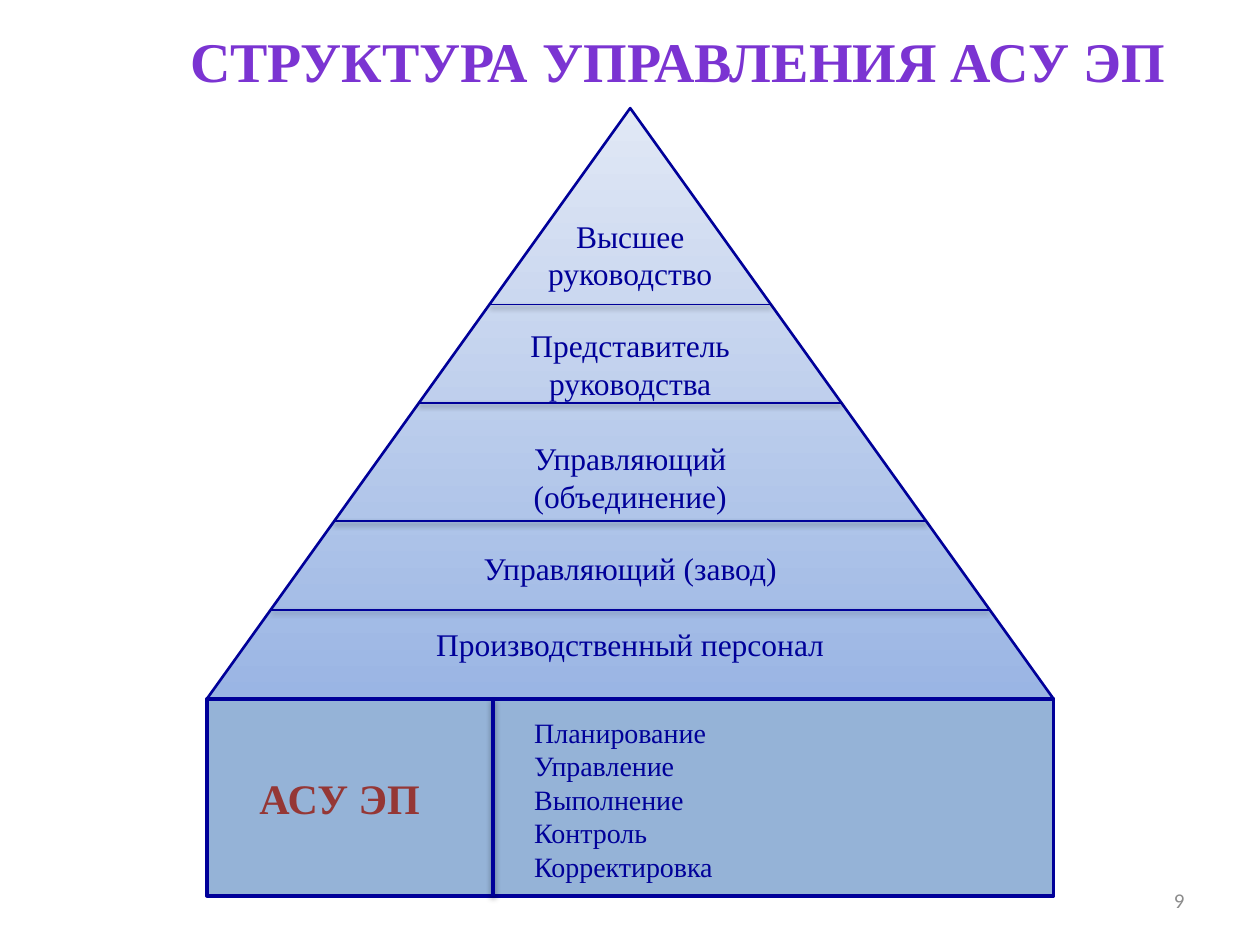
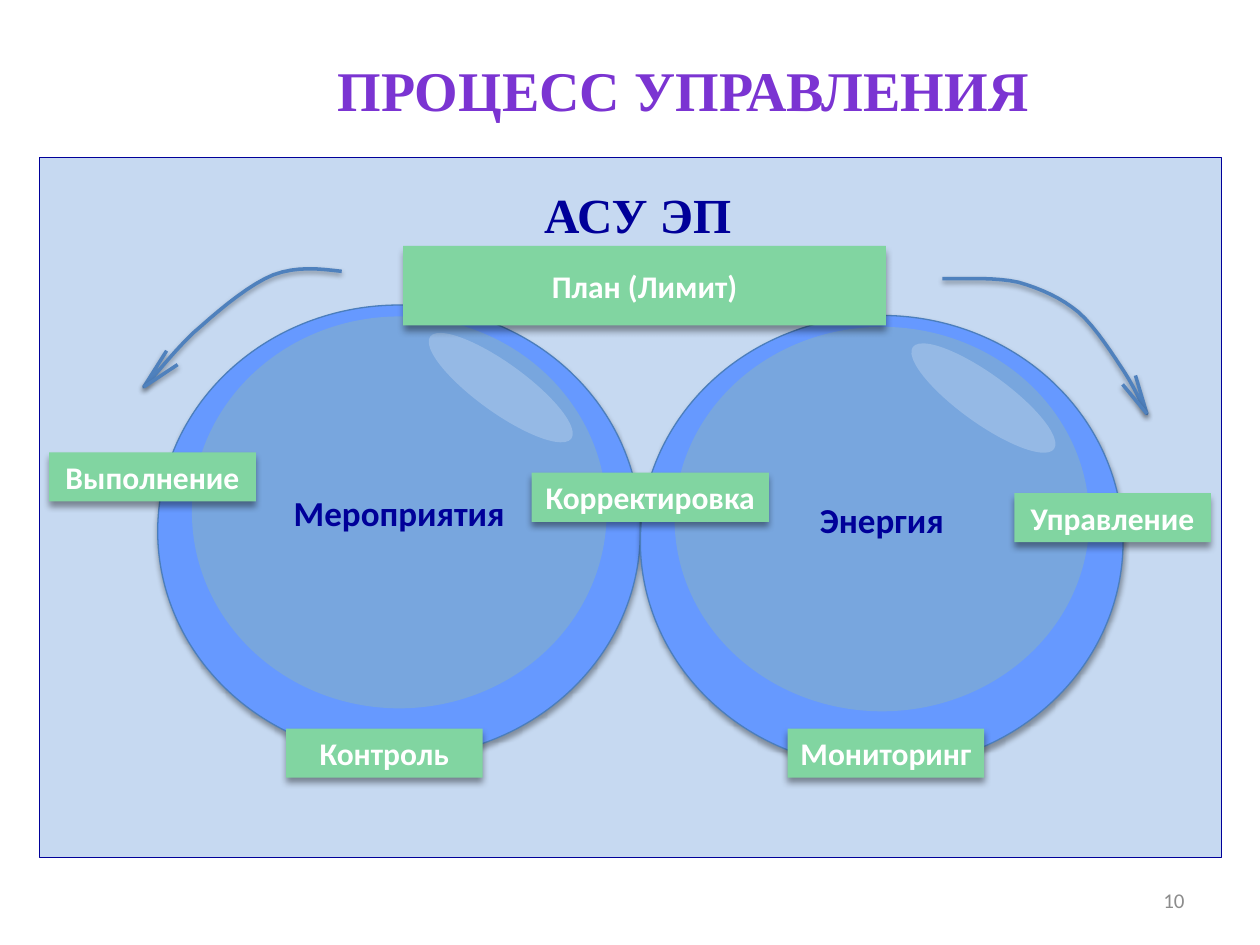
from lxml.etree import SubElement
from pptx import Presentation
from pptx.dml.color import RGBColor
from pptx.enum.shapes import MSO_CONNECTOR, MSO_SHAPE
from pptx.enum.text import MSO_ANCHOR, MSO_AUTO_SIZE, PP_ALIGN
from pptx.oxml.ns import qn
from pptx.util import Cm, Pt

NAVY = "000099"
VIOLET = "7B34D2"
WHITE = "FFFFFF"
GREY = "8C8C8C"
GREEN = "81D5A1"
ARROW_BLUE = "4F81BD"
SERIF = "Times New Roman"
SANS = "Calibri"

TITLE = {"name": SERIF, "size": Pt(32), "bold": True, "color": VIOLET}
PAGE_NUMBER = {"name": SANS, "size": Pt(12), "color": GREY}
LEVEL = {"name": SERIF, "size": Pt(18), "color": NAVY}
FUNCTION = {"name": SERIF, "size": Pt(16), "color": NAVY}
SYSTEM = {"name": SERIF, "size": Pt(24), "bold": True, "color": "953735"}
PANEL_HEADING = {"name": SERIF, "size": Pt(28), "bold": True, "color": NAVY}
BALL_LABEL = {"name": SANS, "size": Pt(20), "bold": True, "color": NAVY}
STAGE = {"name": SANS, "size": Pt(18), "bold": True, "color": WHITE}

LINE_SHADOW = (38, 3.1, 1.6)
BALL_SHADOW = (35, 3.1, 1.8)
STAGE_SHADOW = (40, 4, 3)

PYRAMID_LEVELS = [
    ("Высшее\nруководство", 2.95),
    ("Представитель\nруководства", 5.16),
    ("Управляющий\n(объединение)", 7.44),
    ("Управляющий (завод)", 9.27),
    ("Производственный персонал", 10.8),
]
LEVEL_BORDERS = [3.96, 5.94, 8.33, 10.11]
FUNCTIONS = "Планирование\nУправление\nВыполнение\nКонтроль\nКорректировка"

STAGES = [
    ("План (Лимит)", 7.34, 1.78, 9.73, 1.6),
    ("Корректировка", 9.93, 6.35, 4.78, 0.99),
    ("Выполнение", 0.2, 5.94, 4.17, 0.99),
    ("Контроль", 4.98, 11.51, 3.96, 0.99),
    ("Мониторинг", 15.09, 11.51, 3.96, 0.99),
    ("Управление", 19.66, 6.76, 3.96, 0.99),
]
RIGHT_CURVE = [
    (18.21, 2.44), (18.75, 2.44), (19.28, 2.41), (19.74, 2.51),
    (20.19, 2.64), (20.6, 2.82), (20.96, 3.12),
    (21.31, 3.43), (21.67, 4.01), (21.89, 4.34),
    (22.12, 4.7), (22.3, 5.13), (22.33, 5.16),
]
LEFT_CURVE = [
    (6.1, 2.29), (5.66, 2.24), (5.21, 2.18), (4.72, 2.36),
    (4.27, 2.54), (3.71, 3.0), (3.28, 3.38),
    (2.84, 3.73), (2.24, 4.52), (2.11, 4.62),
]


def color(hex_text):
    """Turn a hex string into a colour."""
    return RGBColor.from_string(hex_text)


def set_effects(shape, shadow=None):
    """Replace the theme shadow by none or by a soft downward one."""
    effects = SubElement(shape._element.spPr, qn("a:effectLst"))
    if shadow:
        opacity, blur, distance = shadow
        outer = SubElement(effects, qn("a:outerShdw"), blurRad=str(Pt(blur)),
                           dist=str(Pt(distance)), dir="5400000", rotWithShape="0")
        black = SubElement(outer, qn("a:srgbClr"), val="000000")
        SubElement(black, qn("a:alpha"), val=str(opacity * 1000))


def set_line(shape, line_color, width):
    """Colour the outline, or hide it when no colour is given."""
    if line_color:
        shape.line.color.rgb = color(line_color)
        shape.line.width = Pt(width)
    else:
        shape.line.fill.background()


def write(shape, text, font_format, alignment=PP_ALIGN.CENTER,
          anchor=MSO_ANCHOR.MIDDLE, **frame_format):
    """Fill a shape with formatted paragraphs, one for each line of text."""
    frame = shape.text_frame
    frame.text = text
    settings = {"word_wrap": True, "auto_size": MSO_AUTO_SIZE.NONE,
                "vertical_anchor": anchor, **frame_format}
    for name, value in settings.items():
        setattr(frame, name, value)
    for paragraph in frame.paragraphs:
        paragraph.alignment = alignment
        for name, value in font_format.items():
            if name == "color":
                paragraph.font.color.rgb = color(value)
            else:
                setattr(paragraph.font, name, value)


def add_text(slide, box, text, font_format, **options):
    """Add a text box at a box given in centimetres."""
    shape = slide.shapes.add_textbox(*map(Cm, box))
    write(shape, text, font_format, **options)


def add_figure(slide, kind, box, fill, line_color=None, width=1, shadow=None):
    """Add a filled preset shape at a box given in centimetres."""
    shape = slide.shapes.add_shape(kind, *map(Cm, box))
    shape.fill.solid()
    shape.fill.fore_color.rgb = color(fill)
    set_line(shape, line_color, width)
    set_effects(shape, shadow)
    return shape


def add_line(slide, start, end, line_color, width):
    """Draw a straight shadowed line between two points."""
    line = slide.shapes.add_connector(MSO_CONNECTOR.STRAIGHT, *map(Cm, start + end))
    set_line(line, line_color, width)
    set_effects(line, LINE_SHADOW)


def add_titled_slide(presentation, title, title_box, page_number):
    """Add a slide with the shared title style and page number."""
    slide = presentation.slides.add_slide(presentation.slide_layouts[5])
    heading = slide.shapes.title
    heading.left, heading.top, heading.width, heading.height = map(Cm, title_box)
    write(heading, title, TITLE, alignment=PP_ALIGN.LEFT, anchor=MSO_ANCHOR.TOP,
          word_wrap=False)
    add_text(slide, (18.2, 17.65, 5.93, 1.01), page_number, PAGE_NUMBER,
             alignment=PP_ALIGN.RIGHT)
    return slide


def draw_pyramid(slide, left, top, width, height):
    """Draw the triangle with its management levels and their borders."""
    pyramid = slide.shapes.add_shape(MSO_SHAPE.ISOSCELES_TRIANGLE,
                                     *map(Cm, (left, top, width, height)))
    pyramid.fill.gradient()
    pyramid.fill.gradient_angle = 90
    for stop, shade in zip(pyramid.fill.gradient_stops, ("9AB5E4", "E1E8F5")):
        stop.color.rgb = color(shade)
    set_line(pyramid, NAVY, 1.5)
    set_effects(pyramid)
    middle = left + width / 2
    for depth in LEVEL_BORDERS:
        half = width / 2 * depth / height
        add_line(slide, (middle - half, top + depth), (middle + half, top + depth),
                 NAVY, 1)
    for text, depth in PYRAMID_LEVELS:
        add_text(slide, (left, top + depth - 1, width, 2), text, LEVEL)


def draw_foundation(slide, left, top, width, height):
    """Draw the base block with the system name and its functions."""
    block = add_figure(slide, MSO_SHAPE.RECTANGLE, (left, top, width, height),
                       "95B3D7", NAVY, 2)
    write(block, "АСУ ЭП", SYSTEM, alignment=PP_ALIGN.LEFT, margin_left=Cm(1.06))
    divider = left + 5.77
    add_line(slide, (divider, top), (divider, top + height), NAVY, 2)
    add_text(slide, (divider + 0.58, top + 0.2, 7.75, 3.68), FUNCTIONS, FUNCTION,
             alignment=PP_ALIGN.LEFT, anchor=MSO_ANCHOR.TOP)


def draw_ball(slide, left, top, core_height, label):
    """Draw a glossy ball with a label in its core."""
    add_figure(slide, MSO_SHAPE.OVAL, (left, top, 9.73, 9.12), "6699FF",
               "4B7EBC", 0.75, BALL_SHADOW)
    core = add_figure(slide, MSO_SHAPE.OVAL,
                      (left + 0.69, top + 0.23, 8.36, core_height), "78A6DE")
    write(core, label, BALL_LABEL)
    gloss = add_figure(slide, MSO_SHAPE.OVAL, (left + 5.16, top + 1.17, 3.51, 0.99),
                       WHITE)
    gloss.rotation = 35.8
    gloss_color = gloss._element.spPr.find(qn("a:solidFill")).find(qn("a:srgbClr"))
    SubElement(gloss_color, qn("a:alpha"), val="22000")


def bezier_points(controls, steps=8):
    """Sample a chain of cubic curves into points."""
    points = [controls[0]]
    for index in range(0, len(controls) - 1, 3):
        segment = controls[index:index + 4]
        for step in range(1, steps + 1):
            t = step / steps
            weights = ((1 - t) ** 3, 3 * t * (1 - t) ** 2, 3 * t * t * (1 - t), t ** 3)
            points.append(tuple(sum(weight * point[axis]
                                    for weight, point in zip(weights, segment))
                                for axis in (0, 1)))
    return points


def draw_curved_arrow(slide, left, top, controls, first_barb, second_barb):
    """Draw a curved arrow with two open barbs at its tip."""
    points = [(left + x, top + y)
              for x, y in bezier_points(controls) + [first_barb]]
    builder = slide.shapes.build_freeform(*map(Cm, points[0]))
    builder.add_line_segments([(Cm(x), Cm(y)) for x, y in points[1:]], close=False)
    curve = builder.convert_to_shape()
    curve.fill.background()
    set_line(curve, ARROW_BLUE, 2)
    set_effects(curve, LINE_SHADOW)
    barb_end = (left + second_barb[0], top + second_barb[1])
    add_line(slide, points[-2], barb_end, ARROW_BLUE, 2)


def draw_process(slide, left, top, width, height):
    """Draw the panel with both balls, the stages and the arrows."""
    add_figure(slide, MSO_SHAPE.RECTANGLE, (left, top, width, height),
               "C6D9F1", NAVY, 0.25)
    draw_ball(slide, left + 2.39, top + 2.97, 7.9, "Мероприятия")
    draw_ball(slide, left + 12.12, top + 3.18, 7.75, "Энергия")
    for text, x, y, stage_width, stage_height in STAGES:
        stage = add_figure(slide, MSO_SHAPE.RECTANGLE,
                           (left + x, top + y, stage_width, stage_height),
                           GREEN, shadow=STAGE_SHADOW)
        write(stage, text, STAGE, margin_left=0, margin_right=0)
    draw_curved_arrow(slide, left, top, RIGHT_CURVE, (22.1, 4.39), (21.84, 4.57))
    draw_curved_arrow(slide, left, top, LEFT_CURVE, (2.57, 3.89), (2.79, 4.17))
    add_text(slide, (left + 9.93, top + 0.41, 4.32, 1.45), "АСУ ЭП", PANEL_HEADING,
             alignment=PP_ALIGN.LEFT, anchor=MSO_ANCHOR.TOP, word_wrap=False)


def main():
    """Build both slides and save them."""
    presentation = Presentation()
    presentation.slide_width, presentation.slide_height = Cm(25.4), Cm(19.05)
    structure = add_titled_slide(presentation, "СТРУКТУРА УПРАВЛЕНИЯ АСУ ЭП",
                                 (3.58, 0.41, 20.35, 1.63), "9")
    draw_pyramid(structure, 4.17, 2.18, 17.07, 11.91)
    draw_foundation(structure, 4.17, 14.09, 17.07, 3.97)
    process = add_titled_slide(presentation, "ПРОЦЕСС УПРАВЛЕНИЯ",
                               (6.55, 0.99, 14.58, 1.63), "10")
    draw_process(process, 0.79, 3.18, 23.83, 14.1)
    presentation.save("out.pptx")


if __name__ == "__main__":
    main()
